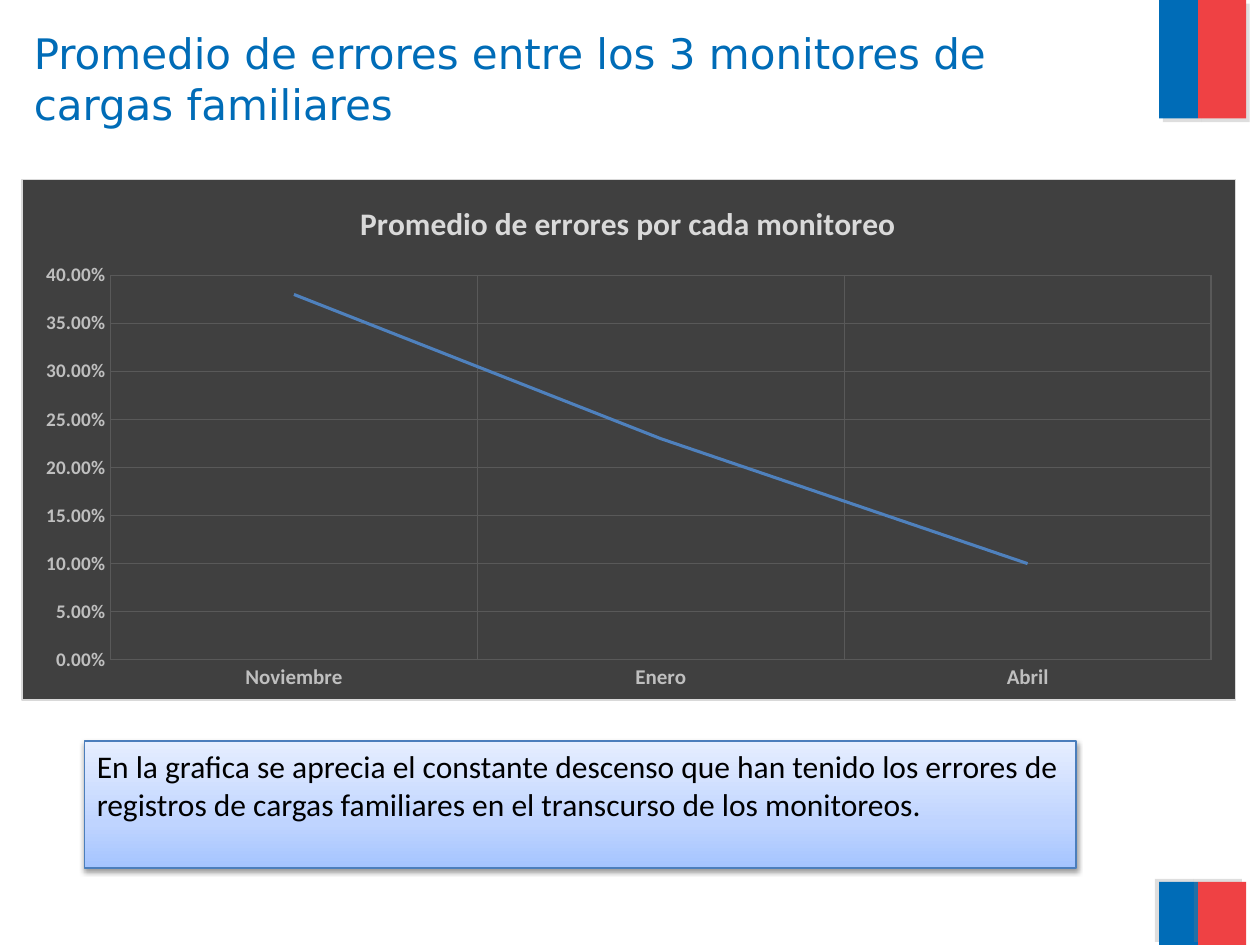
from copy import deepcopy
from lxml import etree
from pptx import Presentation
from pptx import util as u
from pptx.chart import data
from pptx.dml.color import RGBColor
from pptx.enum import chart as ch, shapes, text
from pptx.oxml import parse_xml
from pptx.oxml.ns import nsdecls, qn

# Content
TITLE = "Promedio de errores entre los 3 monitores de cargas familiares"
CHART_TITLE = "Promedio de errores por cada monitoreo"
ERRORS = {"Noviembre": 0.38, "Enero": 0.23, "Abril": 0.1}
COMMENT = ("En la grafica se aprecia el constante descenso que han tenido los errores "
           "de registros de cargas familiares en el transcurso de los monitoreos.")


class Theme:
    blue, red, black = "006CB7", "EF4144", "000000"
    panel, panel_edge, grid = "404040", "D9D9D9", "595959"
    chart_title, axis, trend = "D9D9D9", "BFBFBF", "4F81BD"
    note_edge = "4B7EBC"
    note_stops = [(0, "A4C4FF"), (0.35, "BFD4FF"), (1, "E6EEFF")]
    heading_font, body_font = "DejaVu Sans", "Calibri"
    heading, body, category, value = 24, 18, 12, 11


# Places as left, top, width, height in inches
TITLE_BOX = (0.17, 0.17, 8.93, 1.25)
CHART_BOX = (0.17, 1.42, 9.64, 4.14)
NOTE_BOX = (0.67, 5.88, 7.87, 1.01)
FLAG_COLUMNS = [(9.2, 0.31, Theme.blue), (9.51, 0.38, Theme.red)]
FLAG_ROWS = [(0, 0.94, 45), (7, 0.5, 215)]  # top, height, shadow angle
# Shares of the chart's size
PLOT_LAYOUT = {"x": 0.073, "y": 0.184, "w": 0.907, "h": 0.739}
TITLE_LAYOUT = {"x": 0.274, "y": 0.032}


def rgb(color):
    return RGBColor.from_string(color)


def inches(box):
    return [u.Inches(length) for length in box]


def style(font, size, color, name=Theme.body_font, bold=False):
    font.size, font.name, font.bold = u.Pt(size), name, bold
    font.color.rgb = rgb(color)


def outline(line, color, width=0.75):
    line.color.rgb, line.width = rgb(color), u.Pt(width)


def write(frame, words, **look):
    frame.word_wrap = True
    frame.vertical_anchor = text.MSO_ANCHOR.TOP
    paragraph = frame.paragraphs[0]
    paragraph.alignment = text.PP_ALIGN.LEFT
    run = paragraph.add_run()
    run.text = words
    style(run.font, **look)


def cast_shadow(shape, color, opacity, blur, distance, angle):
    shape.shadow.inherit = False
    effects = shape._element.spPr.find(qn("a:effectLst"))
    effects.append(parse_xml(
        f'<a:outerShdw {nsdecls("a")} blurRad="{u.Pt(blur)}" dist="{u.Pt(distance)}" '
        f'dir="{angle * 60000}" algn="ctr" rotWithShape="0"><a:srgbClr val="{color}">'
        f'<a:alpha val="{opacity * 1000}"/></a:srgbClr></a:outerShdw>'))


def place(element, shares, inner=False):
    """Give a chart part a fixed layout, in shares of the chart."""
    layout = element.find(qn("c:layout"))
    if layout is None:
        layout = etree.Element(qn("c:layout"))
        before = element.find(qn("c:tx"))
        if before is None:
            element.insert(0, layout)
        else:
            before.addnext(layout)
    manual = etree.SubElement(layout, qn("c:manualLayout"))
    entries = [("layoutTarget", "inner")] if inner else []
    entries += [("xMode", "edge"), ("yMode", "edge"), *shares.items()]
    for tag, value in entries:
        etree.SubElement(manual, qn(f"c:{tag}")).set("val", str(value))


def add_flags(slide):
    for top, height, angle in FLAG_ROWS:
        for left, width, color in FLAG_COLUMNS:
            band = slide.shapes.add_shape(
                shapes.MSO_SHAPE.RECTANGLE, *inches((left, top, width, height)))
            band.fill.solid()
            band.fill.fore_color.rgb = rgb(color)
            band.line.fill.background()
            cast_shadow(band, "808080", 25, 0, 3, angle)


def add_error_chart(slide):
    errors = data.CategoryChartData(number_format="0.00%")
    errors.categories = list(ERRORS)
    errors.add_series("Series 1", list(ERRORS.values()))
    chart = slide.shapes.add_chart(
        ch.XL_CHART_TYPE.LINE, *inches(CHART_BOX), errors).chart
    style(chart.font, 10, Theme.black)
    chart.has_legend = False

    # Title
    heading = chart.chart_title.text_frame.paragraphs[0].add_run()
    heading.text = CHART_TITLE
    style(heading.font, Theme.body, Theme.chart_title, bold=True)
    chart.chart_title.include_in_layout = False

    # Axes
    for axis, size in ((chart.category_axis, Theme.category),
                       (chart.value_axis, Theme.value)):
        axis.has_major_gridlines = True
        outline(axis.major_gridlines.format.line, Theme.grid)
        axis.format.line.fill.background()
        axis.major_tick_mark = axis.minor_tick_mark = ch.XL_TICK_MARK.NONE
        style(axis.tick_labels.font, size, Theme.axis, bold=True)
    scale = chart.value_axis
    scale.minimum_scale, scale.maximum_scale, scale.major_unit = 0, 0.4, 0.05
    scale.tick_labels.number_format = "0.00%"
    scale.tick_labels.number_format_is_linked = False

    # Trend line
    trend = chart.plots[0].series[0]
    trend.smooth = False
    trend.marker.style = ch.XL_MARKER_STYLE.NONE
    outline(trend.format.line, Theme.trend, 1.75)
    chart.plots[0].vary_by_categories = False

    # Dark panel and fixed layout
    space = chart._chartSpace
    body = space.find(qn("c:chart"))
    body.addnext(parse_xml(
        f'<c:spPr {nsdecls("c", "a")}><a:solidFill><a:srgbClr val="{Theme.panel}"/>'
        f'</a:solidFill><a:ln w="{u.Pt(0.75)}"><a:solidFill>'
        f'<a:srgbClr val="{Theme.panel_edge}"/></a:solidFill></a:ln></c:spPr>'))
    if space.find(qn("c:roundedCorners")) is None:
        corners = parse_xml(f'<c:roundedCorners {nsdecls("c")} val="0"/>')
        space.find(qn("c:date1904")).addnext(corners)
    place(body.find(qn("c:title")), TITLE_LAYOUT)
    place(body.find(qn("c:plotArea")), PLOT_LAYOUT, inner=True)


def add_note(slide):
    note = slide.shapes.add_shape(shapes.MSO_SHAPE.RECTANGLE, *inches(NOTE_BOX))
    note.fill.gradient()
    note.fill.gradient_angle = 90
    stop_list = note._element.spPr.find(f".//{qn('a:gsLst')}")
    stop_list.append(deepcopy(stop_list[0]))
    for stop, (position, color) in zip(note.fill.gradient_stops, Theme.note_stops):
        stop.position = position
        stop.color.rgb = rgb(color)
    outline(note.line, Theme.note_edge)
    cast_shadow(note, "000000", 38, 3.1, 1.6, 90)
    write(note.text_frame, COMMENT, size=Theme.body, color=Theme.black)


def main():
    deck = Presentation()
    deck.slide_width, deck.slide_height = u.Inches(10), u.Inches(7.5)
    slide = deck.slides.add_slide(deck.slide_layouts[6])
    add_flags(slide)
    title = slide.shapes.add_textbox(*inches(TITLE_BOX))
    write(title.text_frame, TITLE, size=Theme.heading, color=Theme.blue,
          name=Theme.heading_font)
    add_error_chart(slide)
    add_note(slide)
    deck.save("out.pptx")


if __name__ == "__main__":
    main()
